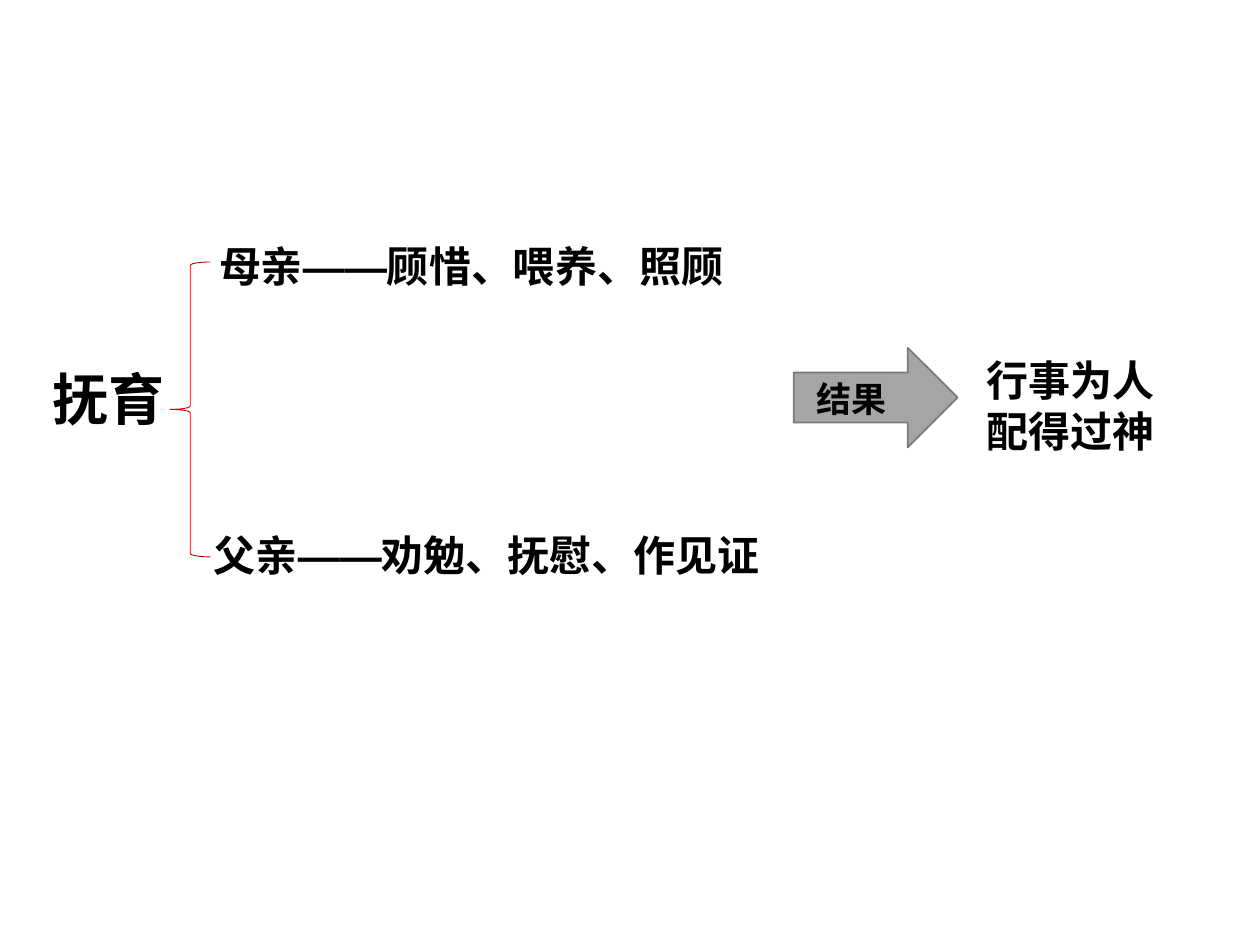
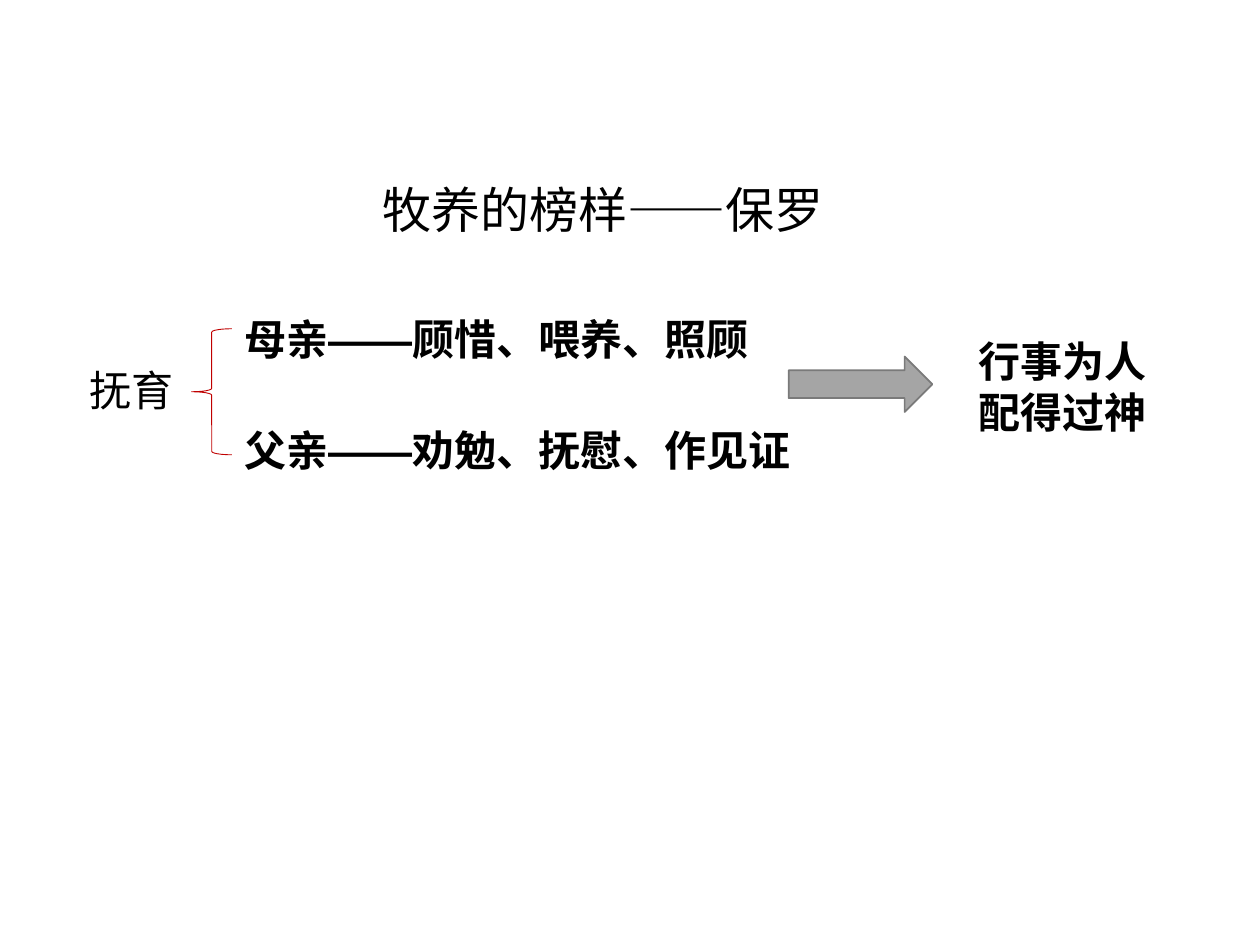
from lxml import etree
from pptx import Presentation
from pptx.dml.color import RGBColor
from pptx.enum.lang import MSO_LANGUAGE_ID
from pptx.enum.shapes import MSO_SHAPE
from pptx.enum.text import MSO_ANCHOR
from pptx.oxml.ns import qn
from pptx.util import Inches, Pt

BRACE = MSO_SHAPE.LEFT_BRACE
ARROW = MSO_SHAPE.RIGHT_ARROW
MIDDLE = MSO_ANCHOR.MIDDLE
CHINESE = MSO_LANGUAGE_ID.SIMPLIFIED_CHINESE

COLORS = {"text": "000000", "brace": "C00000", "arrow": "A5A5A5", "arrow_edge": "7A7A7A"}
LATIN, CJK, HEADING = "Arial", "Noto Sans CJK SC", "Calibri"

NURTURE = "抚育"
MOTHER = "母亲——顾惜、喂养、照顾"
FATHER = "父亲——劝勉、抚慰、作见证"
OUTCOME = "行事为人配得过神"


class Deck:
    def __init__(self):
        self.presentation = Presentation()
        self.presentation.slide_width = Inches(10)
        self.presentation.slide_height = Inches(7.5)
        self.slide = None

    def new_slide(self):
        self.slide = self.presentation.slides.add_slide(self.presentation.slide_layouts[6])

    def color(self, name):
        return RGBColor.from_string(COLORS[name])

    def label(self, text, left, top, width, height=0.5, size=24, font=LATIN, bold=True, wrap=True):
        box = self.slide.shapes.add_textbox(Inches(left), Inches(top), Inches(width), Inches(height))
        frame = box.text_frame
        frame.word_wrap = wrap
        frame.vertical_anchor = MIDDLE
        frame.text = text
        style = frame.paragraphs[0].runs[0].font
        style.name = font
        style.size = Pt(size)
        style.bold = bold
        style.color.rgb = self.color("text")
        style.language_id = CHINESE
        east_asian = etree.Element(qn("a:ea"), typeface=font)
        style._element.find(qn("a:latin")).addnext(east_asian)

    def outline(self, kind, left, top, width, height, edge, weight):
        shape = self.slide.shapes.add_shape(
            kind, Inches(left), Inches(top), Inches(width), Inches(height))
        shape.shadow.inherit = False
        shape.fill.background()
        shape.line.color.rgb = self.color(edge)
        shape.line.width = Pt(weight)
        return shape

    def brace(self, left, top, height):
        self.outline(BRACE, left, top, 0.32, height, "brace", 0.5)

    def arrow(self, left, top, width, height):
        arrow = self.outline(ARROW, left, top, width, height, "arrow_edge", 1)
        arrow.fill.solid()
        arrow.fill.fore_color.rgb = self.color("arrow")

    def parents(self, mother_at, father_at):
        self.label(MOTHER, *mother_at, 4.47)
        self.label(FATHER, *father_at, 4.97)

    def outcome(self, left, top):
        self.label(OUTCOME, left, top, 1.67, 0.91)


def build_nurture(deck):
    deck.new_slide()
    deck.label(NURTURE, 0.32, 2.84, 1.2, 0.64, size=32, font=HEADING)
    deck.brace(1.35, 2.08, 2.34)
    deck.parents((1.64, 1.86), (1.6, 4.15))
    deck.arrow(6.3, 2.76, 1.3, 0.79)
    deck.outcome(7.73, 2.76)
    deck.label("结果", 6.38, 2.94, 0.91, 0.44, size=20)


def build_example(deck):
    deck.new_slide()
    deck.label("牧养的榜样——保罗", 2.94, 1.37, 3.76, 0.57, size=28, font=CJK, bold=False, wrap=False)
    deck.brace(1.52, 2.61, 1)
    deck.parents((1.84, 2.44), (1.84, 3.32))
    deck.arrow(6.26, 2.83, 1.14, 0.44)
    deck.outcome(7.67, 2.61)
    deck.label(NURTURE, 0.61, 2.84, 0.87, font=CJK, bold=False, wrap=False)


def main():
    deck = Deck()
    build_nurture(deck)
    build_example(deck)
    deck.presentation.save("out.pptx")


if __name__ == "__main__":
    main()
